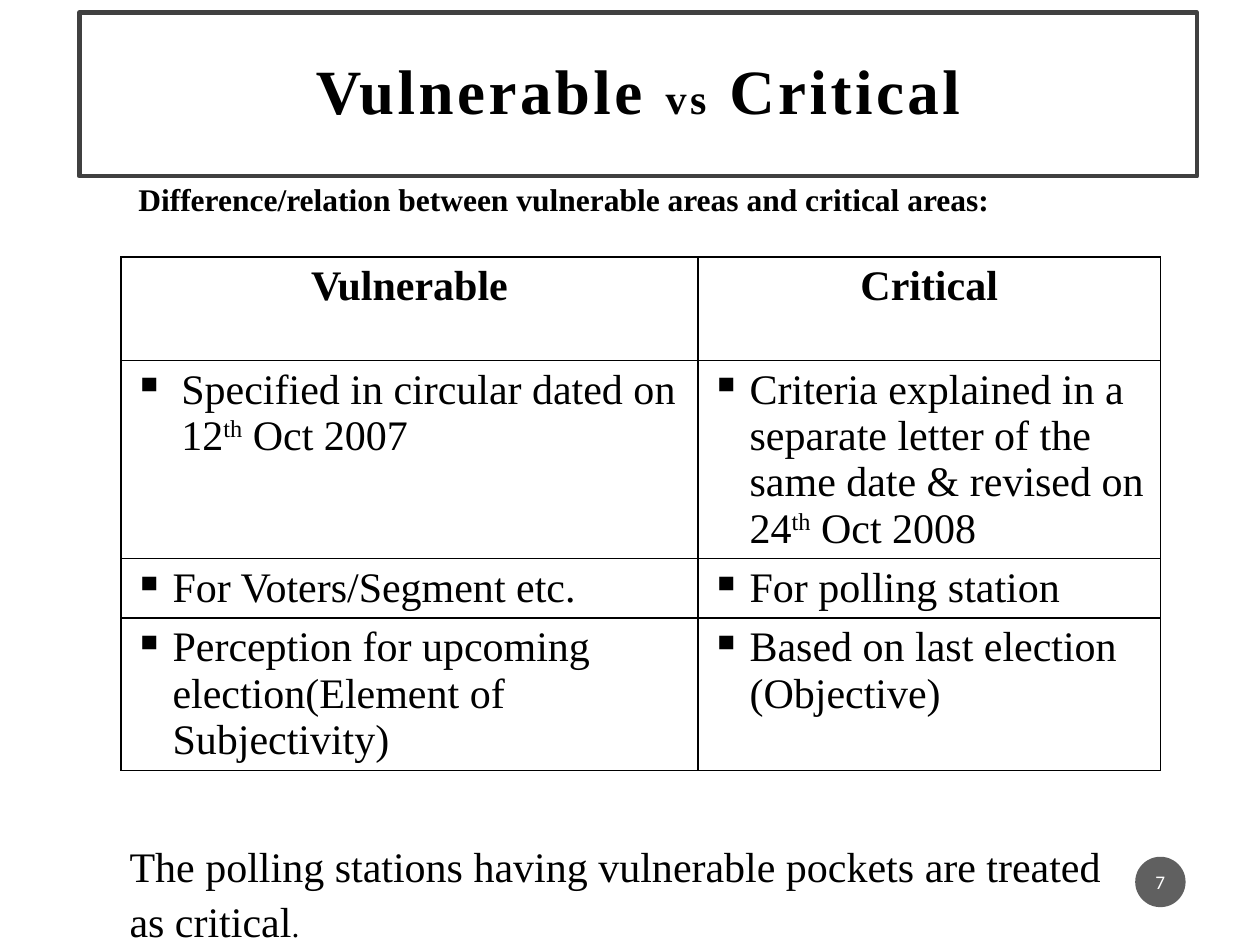
from lxml import etree
from pptx import Presentation
from pptx.dml.color import RGBColor
from pptx.enum.shapes import MSO_SHAPE
from pptx.enum.text import MSO_ANCHOR, PP_ALIGN
from pptx.oxml.ns import qn
from pptx.util import Inches, Pt

RECTANGLE, OVAL = MSO_SHAPE.RECTANGLE, MSO_SHAPE.OVAL
MIDDLE = MSO_ANCHOR.MIDDLE
LEFT, CENTER, JUSTIFY = PP_ALIGN.LEFT, PP_ALIGN.CENTER, PP_ALIGN.JUSTIFY
SERIF, SANS = "Times New Roman", "Calibri"
COLORS = {"ink": "000000", "frame": "404040", "badge": "1D1D1D", "white": "FFFFFF"}
COLUMN_WIDTHS = [4.58, 3.67]
ROW_HEIGHTS = [0.82, 1.57, 0.47, 1.21]
HEADINGS = ["Vulnerable", "Critical"]
ROWS = [
    [["Specified in circular dated on 12", "th", " Oct 2007"],
     ["Criteria explained in a separate letter of the same date & revised on 24",
      "th", " Oct 2008"]],
    [["For Voters/Segment etc."], ["For polling station"]],
    [["Perception for upcoming election(Element of Subjectivity)"],
     ["Based on last election (Objective)"]],
]


def color(name):
    return RGBColor.from_string(COLORS[name])


def add_run(paragraph, text, size, bold=False, font=SERIF, ink="ink"):
    run = paragraph.add_run()
    run.text = text
    run.font.size = Pt(size)
    run.font.name = font
    run.font.bold = bold
    run.font.color.rgb = color(ink)
    return run


def add_text(slide, box, pieces, bold=False, alignment=LEFT):
    shape = slide.shapes.add_textbox(*map(Inches, box))
    shape.text_frame.word_wrap = True
    paragraph = shape.text_frame.paragraphs[0]
    paragraph.alignment = alignment
    paragraph.line_spacing = 1.08
    for text, size in pieces:
        add_run(paragraph, text, size, bold)


def add_centered_shape(slide, kind, box, side_margin, end_margin):
    shape = slide.shapes.add_shape(kind, *map(Inches, box))
    shape.shadow.inherit = False
    frame = shape.text_frame
    frame.word_wrap = True
    frame.vertical_anchor = MIDDLE
    frame.margin_left = frame.margin_right = Inches(side_margin)
    frame.margin_top = frame.margin_bottom = Inches(end_margin)
    frame.paragraphs[0].alignment = CENTER
    return shape


def add_title(slide):
    shape = add_centered_shape(slide, RECTANGLE, (0.63, 0.1, 8.87, 1.3), 0.2, 0.2)
    shape.fill.background()
    shape.line.color.rgb = color("frame")
    shape.line.width = Pt(2.5)
    paragraph = shape.text_frame.paragraphs[0]
    paragraph.line_spacing = 0.9
    for text, size in [("Vulnerable ", 36), ("vs", 24), (" Critical", 36)]:
        run = add_run(paragraph, text, size, bold=True)
        run.font._element.set("spc", "200")


def add_page_badge(slide):
    shape = add_centered_shape(slide, OVAL, (9.01, 6.8, 0.4, 0.4), 0.02, 0.05)
    shape.fill.solid()
    shape.fill.fore_color.rgb = color("badge")
    fill_color = shape._element.spPr.find(qn("a:solidFill"))[0]
    etree.SubElement(fill_color, qn("a:alpha"), val="70000")
    shape.line.fill.background()
    add_run(shape.text_frame.paragraphs[0], "7", 11, font=SANS, ink="white")


def style_cell(cell):
    properties = cell._tc.get_or_add_tcPr()
    for side in ("lnL", "lnR", "lnT", "lnB"):
        line = etree.SubElement(properties, qn(f"a:{side}"), w=str(Pt(1)))
        fill = etree.SubElement(line, qn("a:solidFill"))
        etree.SubElement(fill, qn("a:srgbClr"), val=COLORS["ink"])
    cell.fill.background()


def add_bullet(paragraph, indent):
    properties = paragraph._p.get_or_add_pPr()
    properties.set("marL", str(Inches(indent)))
    properties.set("indent", str(-Inches(indent)))
    etree.SubElement(properties, qn("a:buChar"), char="▪")


def add_comparison(slide):
    size = Inches(sum(COLUMN_WIDTHS)), Inches(sum(ROW_HEIGHTS))
    table = slide.shapes.add_table(
        len(ROW_HEIGHTS), len(COLUMN_WIDTHS), Inches(0.96), Inches(2.04), *size).table
    table.first_row = table.horz_banding = False
    for column, width in zip(table.columns, COLUMN_WIDTHS):
        column.width = Inches(width)
    for row, height in zip(table.rows, ROW_HEIGHTS):
        row.height = Inches(height)
    for cell in table.iter_cells():
        style_cell(cell)
    for index, heading in enumerate(HEADINGS):
        paragraph = table.cell(0, index).text_frame.paragraphs[0]
        paragraph.alignment = CENTER
        add_run(paragraph, heading, 24, bold=True)
    for row_index, row in enumerate(ROWS, start=1):
        for column_index, pieces in enumerate(row):
            paragraph = table.cell(row_index, column_index).text_frame.paragraphs[0]
            add_bullet(paragraph, 0.38 if (row_index, column_index) == (1, 0) else 0.31)
            for text in pieces:
                run = add_run(paragraph, text, 24)
                if text == "th":
                    run.font._element.set("baseline", "30000")


def main():
    presentation = Presentation()
    presentation.slide_width = Inches(10)
    presentation.slide_height = Inches(7.5)
    slide = presentation.slides.add_slide(presentation.slide_layouts[6])
    add_title(slide)
    add_comparison(slide)
    add_text(slide, (0.93, 6.59, 7.92, 1.21), [
        ("The polling stations having vulnerable pockets are treated as critical", 24),
        (".", 18)])
    add_page_badge(slide)
    add_text(slide, (1, 1.36, 8.5, 0.4), [
        ("Difference/relation between vulnerable areas and critical areas:", 18)],
        bold=True, alignment=JUSTIFY)
    presentation.save("out.pptx")


if __name__ == "__main__":
    main()
